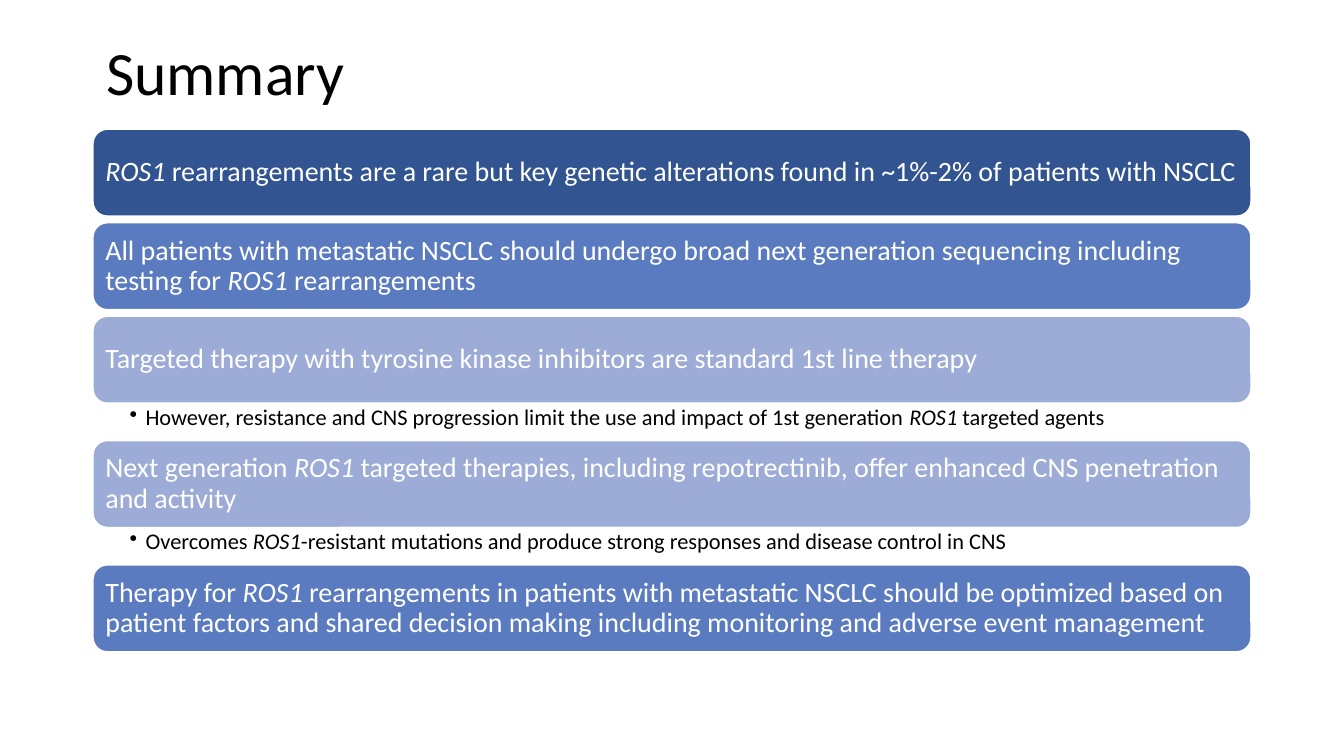
from lxml import etree
from pptx import Presentation
from pptx.dml.color import RGBColor
from pptx.enum import shapes, text
from pptx.oxml.ns import qn
from pptx.util import Pt

TITLE = "Summary"
GENE = "ROS1"  # always set in italics
NAVY, BLUE, PALE = "325491", "5B7BC0", "9DACD6"
WHITE, BLACK = "FFFFFF", "000000"

# (fill, statement, note below or None)
POINTS = [
    (NAVY, "ROS1 rearrangements are a rare but key genetic alterations found in "
           "~1%-2% of patients with NSCLC", None),
    (BLUE, "All patients with metastatic NSCLC should undergo broad next generation "
           "sequencing including testing for ROS1 rearrangements", None),
    (PALE, "Targeted therapy with tyrosine kinase inhibitors are standard 1st line therapy",
     "However, resistance and CNS progression limit the use and impact of "
     "1st generation ROS1 targeted agents"),
    (PALE, "Next generation ROS1 targeted therapies, including repotrectinib, offer "
           "enhanced CNS penetration and activity",
     "Overcomes ROS1-resistant mutations and produce strong responses and "
     "disease control in CNS"),
    (BLUE, "Therapy for ROS1 rearrangements in patients with metastatic NSCLC should be "
           "optimized based on patient factors and shared decision making including "
           "monitoring and adverse event management", None),
]

LEFT, WIDTH, TOP = 49.7, 620.6, 69.1
BOX_H, GAP, NOTE_H = 46.8, 3.3, 19.8


def rgb(value):
    return RGBColor.from_string(value)


def set_frame(tf, anchor, insets=None):
    tf.word_wrap = True
    tf.auto_size = text.MSO_AUTO_SIZE.NONE
    tf.vertical_anchor = anchor
    if insets:
        for side, inset in zip(("left", "top", "right", "bottom"), insets):
            setattr(tf, f"margin_{side}", Pt(inset))


def write(p, words, size, color):
    """Fill a paragraph, with the gene name in italics."""
    p.alignment = text.PP_ALIGN.LEFT
    p.line_spacing = 0.9
    before, gene, after = words.partition(GENE)
    for part in filter(None, (before, gene, after)):
        r = p.add_run()
        r.text = part
        look = {"name": "Calibri", "size": Pt(size), "italic": part == GENE}
        for key, value in look.items():
            setattr(r.font, key, value)
        r.font.color.rgb = rgb(color)


def add_bullet(p, indent):
    pPr = p._p.get_or_add_pPr()
    pPr.set("marL", str(Pt(indent)))
    pPr.set("indent", str(-Pt(indent)))
    etree.SubElement(pPr, qn("a:buChar")).set("char", "•")


def add_statement(s, top, fill, words):
    sp = s.shapes.add_shape(shapes.MSO_SHAPE.ROUNDED_RECTANGLE,
                            Pt(LEFT), Pt(top), Pt(WIDTH), Pt(BOX_H))
    sp.shadow.inherit = False
    sp.fill.solid()
    sp.fill.fore_color.rgb = rgb(fill)
    sp.line.color.rgb = rgb(WHITE)
    sp.line.width = Pt(1)
    set_frame(sp.text_frame, text.MSO_ANCHOR.MIDDLE, (4.5,) * 4)
    write(sp.text_frame.paragraphs[0], words, 15, WHITE)


def add_note(s, top, words):
    sp = s.shapes.add_textbox(Pt(LEFT), Pt(top), Pt(WIDTH), Pt(NOTE_H))
    set_frame(sp.text_frame, text.MSO_ANCHOR.TOP, (19.7, 1.5, 8.6, 1.5))
    p = sp.text_frame.paragraphs[0]
    p.level = 1
    add_bullet(p, 8.6)
    write(p, words, 12, BLACK)


def main():
    prs = Presentation()
    prs.slide_width, prs.slide_height = Pt(720), Pt(405)
    s = prs.slides.add_slide(prs.slide_layouts[5])

    title = s.shapes.title
    title.left, title.top, title.width, title.height = map(Pt, (LEFT, 1.4, WIDTH, 78.3))
    set_frame(title.text_frame, text.MSO_ANCHOR.MIDDLE)
    write(title.text_frame.paragraphs[0], TITLE, 33, BLACK)

    top = TOP
    for fill, statement, note in POINTS:
        add_statement(s, top, fill, statement)
        top += BOX_H
        if note:
            add_note(s, top, note)
        top += NOTE_H if note else GAP

    prs.save("out.pptx")


if __name__ == "__main__":
    main()
